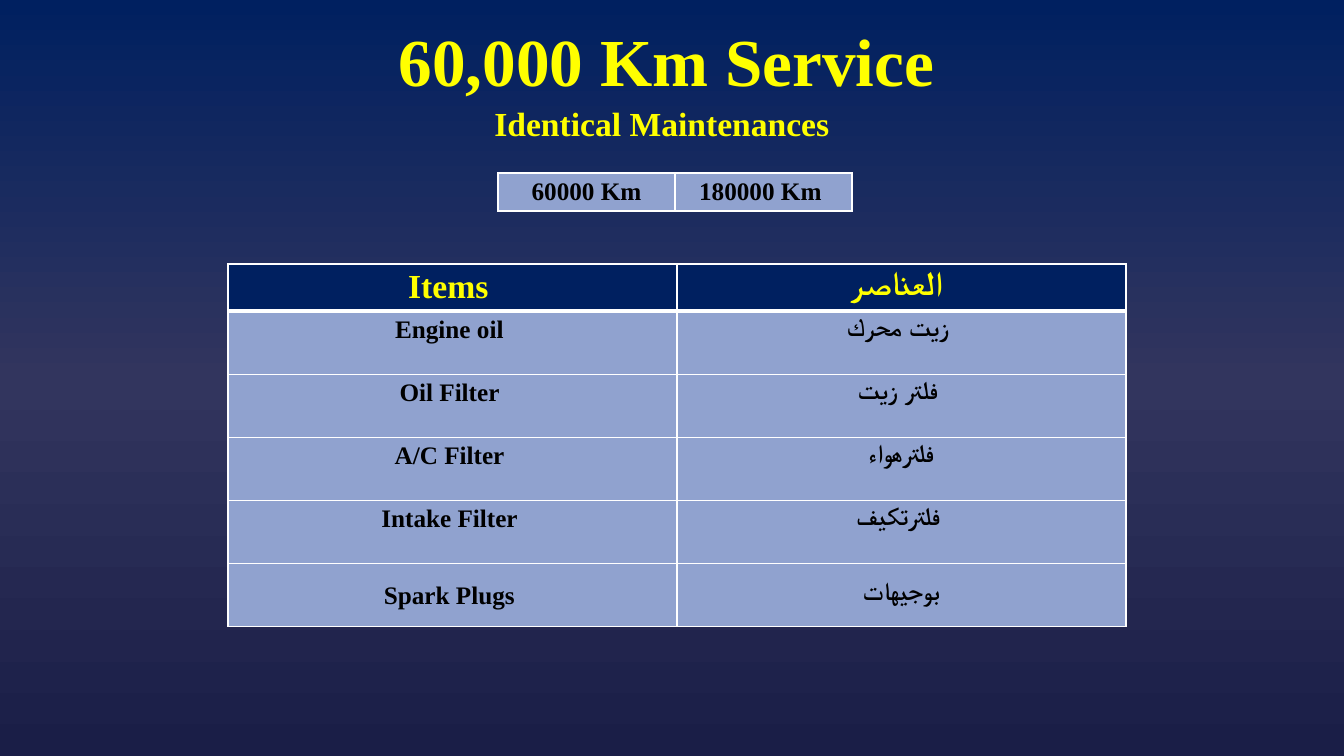
from copy import deepcopy

from pptx import Presentation
from pptx.dml.color import RGBColor
from pptx.enum.text import MSO_ANCHOR, PP_ALIGN
from pptx.oxml.ns import qn
from pptx.util import Pt
from lxml import etree

CENTER = PP_ALIGN.CENTER
MIDDLE = MSO_ANCHOR.MIDDLE
PX = 914400 / 100.8
FONT = "Times New Roman"
COLORS = {
    "navy": "002060",
    "slate": "32355E",
    "indigo": "1A1E47",
    "yellow": "FFFF00",
    "periwinkle": "90A2CF",
    "white": "FFFFFF",
    "black": "000000",
}


def write(text_frame, text, size, color, spacing=1.0):
    text_frame.text = text
    paragraph = text_frame.paragraphs[0]
    paragraph.alignment = CENTER
    paragraph.line_spacing = spacing
    font = paragraph.runs[0].font
    font.name, font.size, font.bold = FONT, Pt(size), True
    font.color.rgb = RGBColor.from_string(COLORS[color])


def style_cell(cell, fill, top=1, bottom=1):
    properties = cell._tc.get_or_add_tcPr()
    for side, width in (("lnL", 1), ("lnR", 1), ("lnT", top), ("lnB", bottom)):
        line = etree.SubElement(properties, qn(f"a:{side}"), w=str(Pt(width)))
        solid = etree.SubElement(line, qn("a:solidFill"))
        etree.SubElement(solid, qn("a:srgbClr"), val=COLORS["white"])
    cell.fill.solid()
    cell.fill.fore_color.rgb = RGBColor.from_string(COLORS[fill])


presentation = Presentation()
presentation.slide_width = round(1344 * PX)
presentation.slide_height = round(756 * PX)
slide = presentation.slides.add_slide(presentation.slide_layouts[5])

# Background: three-stop gradient from top to bottom
background = slide.background.fill
background.gradient()
background.gradient_angle = 270
stop_list = slide._element.find(f".//{qn('a:gsLst')}")
stop_list.insert(1, deepcopy(stop_list[0]))
stops = zip(background.gradient_stops, (0, 0.5, 1), ("navy", "slate", "indigo"))
for stop, position, color in stops:
    stop.position = position
    stop.color.rgb = RGBColor.from_string(COLORS[color])

# Title
title = slide.shapes.title
title.left, title.top, title.width, title.height = [
    round(length * PX) for length in (87, 32, 1159, 66)
]
write(title.text_frame, "60,000 Km Service", 48, "yellow", 0.9)
title.text_frame.vertical_anchor = MIDDLE

# Table of service items
items = [
    ("Items ", "العناصر "),
    ("Engine oil ", "زيت محرك "),
    ("Oil Filter ", "فلتر زيت "),
    ("A/C Filter ", "فلترهواء"),
    ("Intake Filter ", "فلترتكيف "),
    ("Spark Plugs ", "بوجيهات"),
]
items_box = [round(length * PX) for length in (228, 264, 898, 362)]
items_table = slide.shapes.add_table(len(items), 2, *items_box).table
for row_index, names in enumerate(items):
    header = row_index == 0
    items_table.rows[row_index].height = round((47 if header else 63) * PX)
    for column_index, name in enumerate(names):
        cell = items_table.cell(row_index, column_index)
        if header:
            write(cell.text_frame, name, 24, "yellow")
            style_cell(cell, "navy", bottom=3)
        else:
            spacing = 1.5 if row_index == len(items) - 1 else 1.0
            write(cell.text_frame, name, 18, "black", spacing)
            style_cell(cell, "periwinkle", top=3 if row_index == 1 else 1)

# Table of service distances
distances_box = [round(length * PX) for length in (498, 173, 354, 38)]
distances_table = slide.shapes.add_table(1, 2, *distances_box).table
for column_index, distance in enumerate(("60000 Km", "180000 Km ")):
    cell = distances_table.cell(0, column_index)
    write(cell.text_frame, distance, 18, "black")
    style_cell(cell, "periwinkle")

# Subtitle
subtitle_box = [round(length * PX) for length in (391, 98, 550, 50)]
subtitle = slide.shapes.add_textbox(*subtitle_box)
subtitle.text_frame.word_wrap = True
write(subtitle.text_frame, "Identical Maintenances ", 24, "yellow")

presentation.save("out.pptx")
